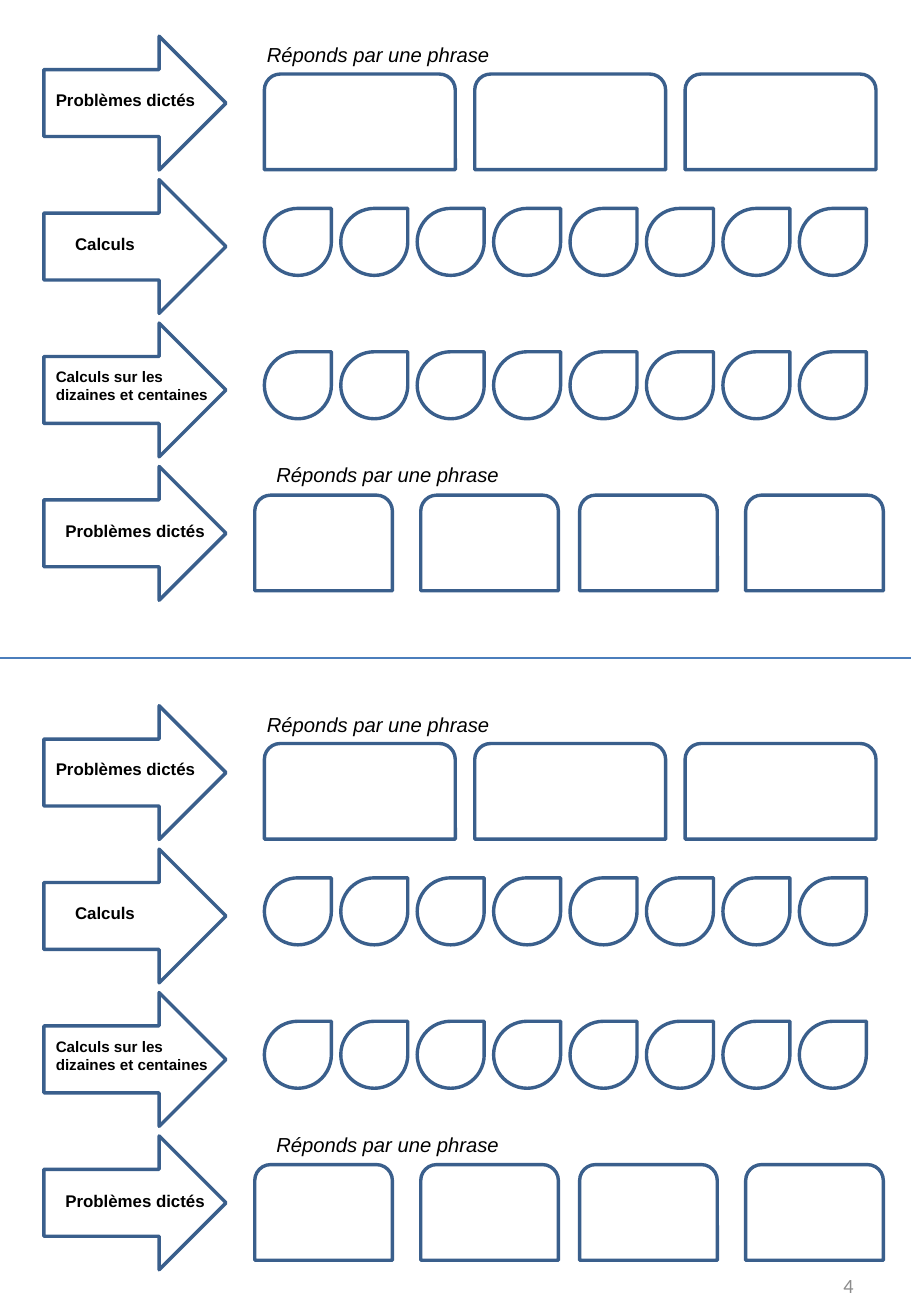
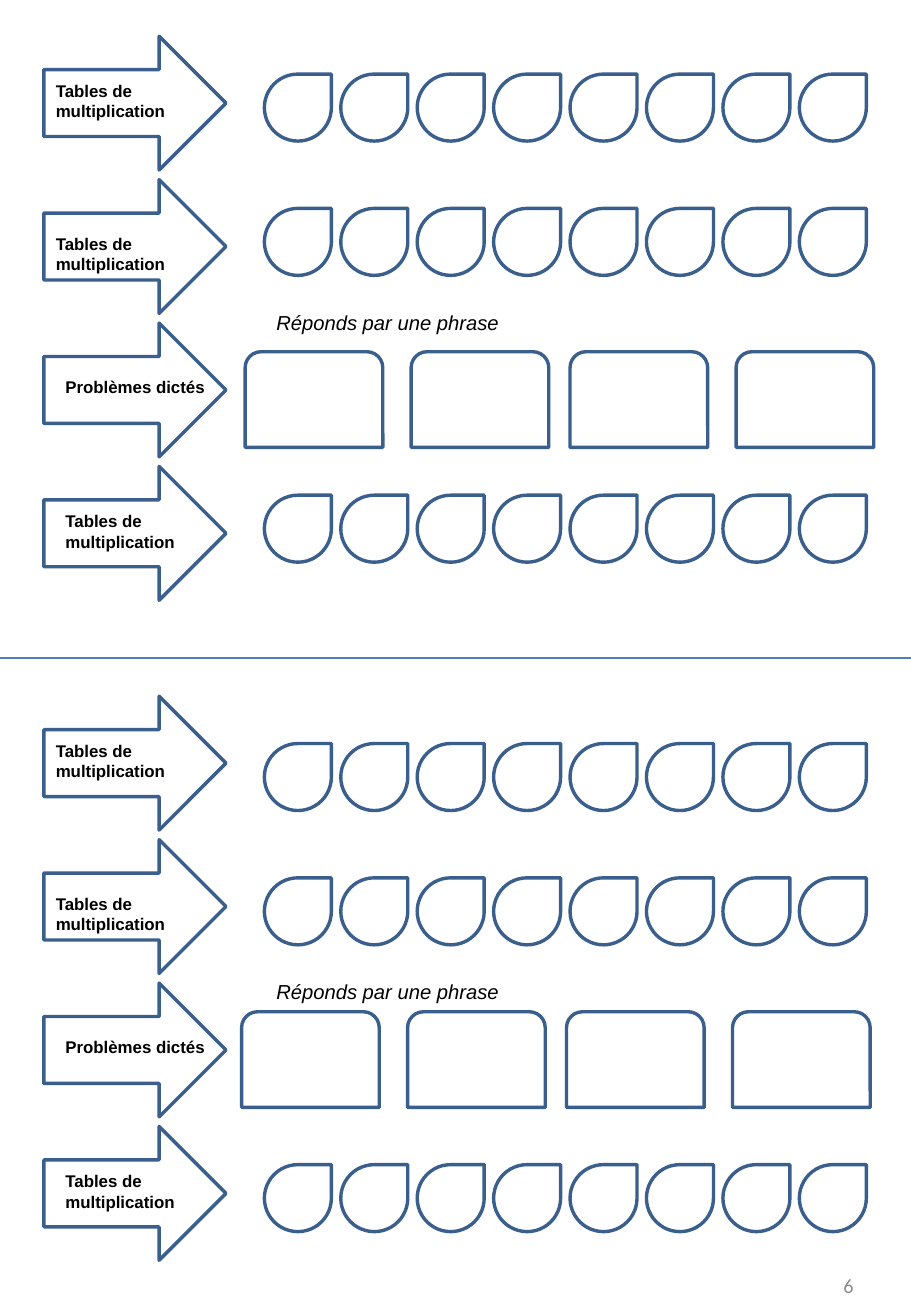
"""Build two mental arithmetic answer sheets, each with two identical halves."""
from dataclasses import dataclass

from lxml import etree
from pptx import Presentation
from pptx.dml.color import RGBColor
from pptx.enum.shapes import MSO_CONNECTOR, MSO_SHAPE
from pptx.enum.text import MSO_ANCHOR, MSO_AUTO_SIZE, PP_ALIGN
from pptx.oxml.ns import qn
from pptx.util import Pt

ARROW = MSO_SHAPE.RIGHT_ARROW
DROP = MSO_SHAPE.TEAR
CARD = MSO_SHAPE.ROUND_2_SAME_RECTANGLE
STRAIGHT = MSO_CONNECTOR.STRAIGHT
LEFT, RIGHT = PP_ALIGN.LEFT, PP_ALIGN.RIGHT
TOP, MIDDLE = MSO_ANCHOR.TOP, MSO_ANCHOR.MIDDLE
FIT_TEXT = MSO_AUTO_SIZE.SHAPE_TO_FIT_TEXT

PAGE_WIDTH, PAGE_HEIGHT = 540, 780
HALF_STEP = 396.8
ROW_STEP = 85
MARGIN = 26
ARROW_TOP = 21.5
ANSWER_LEFT = 156.7
DROP_STEP = 45.3
WIDE_STEP = 124.7
NARROW_OFFSETS = (0, 98.4, 192.6, 291)
NUMBER_TOP, NUMBER_HEIGHT = 750, 24


@dataclass(frozen=True)
class Theme:
    outline: RGBColor = RGBColor(0x3A, 0x5F, 0x8C)
    divider: RGBColor = RGBColor(0x4B, 0x7E, 0xBC)
    ink: RGBColor = RGBColor(0, 0, 0)
    muted: RGBColor = RGBColor(0x8C, 0x8C, 0x8C)
    font: str = "Arial"
    number_font: str = "Calibri"
    label_size: float = 10
    small_size: float = 9
    prompt_size: float = 12
    outline_width: float = 2
    divider_width: float = 0.75


@dataclass(frozen=True)
class Label:
    text: str
    left: float
    top: float
    width: float = 102.2
    height: float = 19.4
    small: bool = False


@dataclass(frozen=True)
class Drops:
    top: float


@dataclass(frozen=True)
class Cards:
    top: float
    prompt_left: float
    prompt_top: float
    left: float = ANSWER_LEFT
    width: float = 113.2
    offsets: tuple = (0, WIDE_STEP, 2 * WIDE_STEP)


class Sheet:
    def __init__(self, deck, theme):
        self.deck = deck
        self.theme = theme
        self.page = None

    def new_page(self, number):
        self.page = self.deck.slides.add_slide(self.deck.slide_layouts[6])
        self.divider()
        self.page_number(number)

    def divider(self):
        middle = Pt(PAGE_HEIGHT / 2)
        line = self.page.shapes.add_connector(STRAIGHT, 0, middle, Pt(PAGE_WIDTH), middle)
        line.line.color.rgb = self.theme.divider
        line.line.width = Pt(self.theme.divider_width)
        etree.SubElement(line._element.spPr, qn("a:effectLst"))

    def outline(self, kind, left, top, width, height):
        shape = self.page.shapes.add_shape(kind, Pt(left), Pt(top), Pt(width), Pt(height))
        shape.shadow.inherit = False
        shape.fill.background()
        shape.line.color.rgb = self.theme.outline
        shape.line.width = Pt(self.theme.outline_width)

    def text(self, text, left, top, width, height, size, font=None, color=None,
             bold=False, italic=False, align=LEFT, anchor=TOP, fit=True):
        box = self.page.shapes.add_textbox(Pt(left), Pt(top), Pt(width), Pt(height))
        frame = box.text_frame
        frame.word_wrap = True
        frame.vertical_anchor = anchor
        if fit:
            frame.auto_size = FIT_TEXT
        frame.text = text
        para = frame.paragraphs[0]
        para.alignment = align
        span = para.runs[0].font
        span.name = font or self.theme.font
        span.size = Pt(size)
        span.bold = bold
        span.italic = italic
        span.color.rgb = color or self.theme.ink

    def page_number(self, number):
        self.text(str(number), 387, NUMBER_TOP, 126, NUMBER_HEIGHT,
                  self.theme.prompt_size, font=self.theme.number_font,
                  color=self.theme.muted, align=RIGHT, anchor=MIDDLE, fit=False)

    def label(self, label, shift):
        size = self.theme.small_size if label.small else self.theme.label_size
        self.text(label.text, label.left, label.top + shift, label.width,
                  label.height, size, bold=True)

    def drops(self, drops, shift):
        for index in range(8):
            self.outline(DROP, ANSWER_LEFT + index * DROP_STEP, drops.top + shift, 39.7, 39.7)

    def cards(self, cards, shift, nudge_x, nudge_y):
        self.text("Réponds par une phrase", cards.prompt_left, cards.prompt_top + shift,
                  363, 21.8, self.theme.prompt_size, italic=True)
        for offset in cards.offsets:
            self.outline(CARD, cards.left + offset + nudge_x,
                         cards.top + shift + nudge_y, cards.width, 56.7)

    def half(self, rows, shift, nudge_x=0, nudge_y=0):
        for index, (label, answers) in enumerate(rows):
            arrow_top = ARROW_TOP + index * ROW_STEP + shift + nudge_y
            self.outline(ARROW, MARGIN, arrow_top, 108, 79.3)
            self.label(label, shift + nudge_y)
            if isinstance(answers, Drops):
                self.drops(answers, shift)
            else:
                self.cards(answers, shift, nudge_x, nudge_y)


PROBLEMS = "Problèmes dictés"
TABLES = "Tables de multiplication"
INDENT = 31.7

PROBLEM_ROWS = (
    (Label(PROBLEMS, MARGIN, 49.6), Cards(43.9, 151.1, 21.6)),
    (Label("Calculs", 37.4, 134.8), Drops(123.5)),
    (Label("Calculs sur les dizaines et centaines", MARGIN, 214.2, 108, 28.8, True),
     Drops(208.5)),
    (Label(PROBLEMS, INDENT, 305.1),
     Cards(293.5, ANSWER_LEFT, 270.7, 151, 81.6, NARROW_OFFSETS)),
)
TABLE_ROWS = (
    (Label(TABLES, MARGIN, 44.1, height=31.7), Drops(43.9)),
    (Label(TABLES, MARGIN, 134.8, 108, 31.7), Drops(123.5)),
    (Label(PROBLEMS, INDENT, 219.7),
     Cards(208.5, ANSWER_LEFT, 180.1, 145.3, 81.6, NARROW_OFFSETS)),
    (Label(TABLES, INDENT, 299.4, height=31.7), Drops(293.5)),
)


def main():
    deck = Presentation()
    deck.slide_width, deck.slide_height = Pt(PAGE_WIDTH), Pt(PAGE_HEIGHT)
    sheet = Sheet(deck, Theme())
    for number, rows, nudge in ((4, PROBLEM_ROWS, (0, 0)), (6, TABLE_ROWS, (-2.1, -5.6))):
        sheet.new_page(number)
        sheet.half(rows, 0)
        sheet.half(rows, HALF_STEP, *nudge)
    deck.save("out.pptx")


if __name__ == "__main__":
    main()
